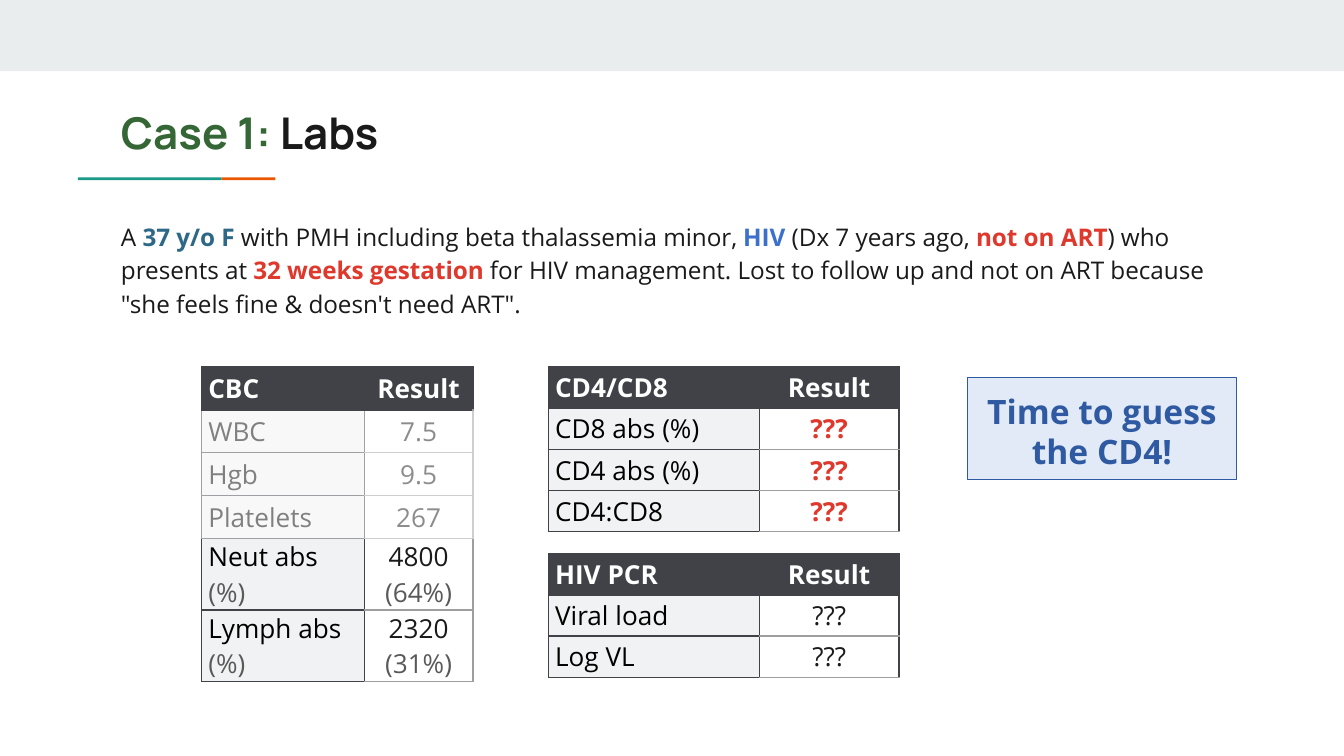
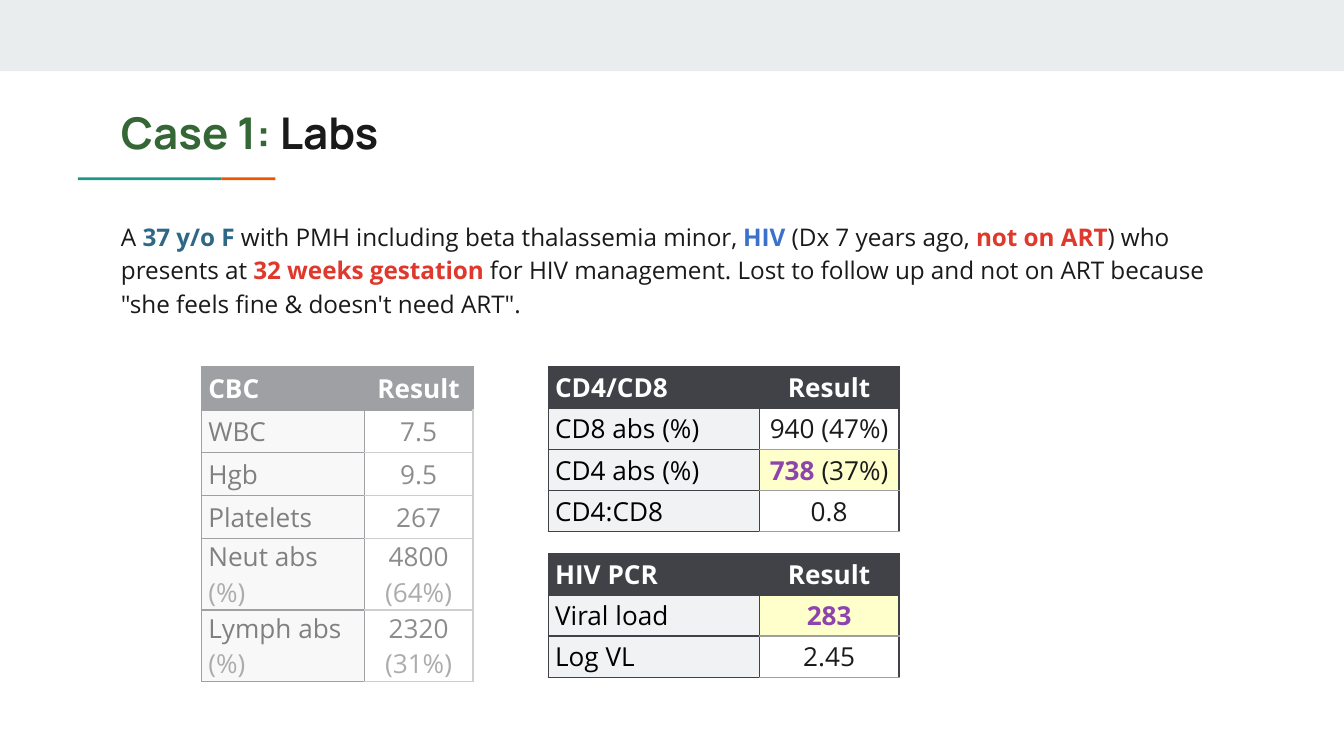
from lxml import etree
from pptx import Presentation
from pptx.dml.color import RGBColor
from pptx.enum.shapes import MSO_SHAPE
from pptx.enum.text import MSO_ANCHOR, MSO_AUTO_SIZE, PP_ALIGN
from pptx.oxml.ns import qn
from pptx.util import Inches, Pt

RECT = MSO_SHAPE.RECTANGLE
LEFT, CENTER = PP_ALIGN.LEFT, PP_ALIGN.CENTER
TOP, MIDDLE = MSO_ANCHOR.TOP, MSO_ANCHOR.MIDDLE
NO_FIT = MSO_AUTO_SIZE.NONE

WHITE = RGBColor(0xFF, 0xFF, 0xFF)
BLACK = RGBColor(0x00, 0x00, 0x00)
INK = RGBColor(0x1A, 0x1A, 0x1A)
MUTED = RGBColor(0x59, 0x59, 0x59)
BAND = RGBColor(0xE9, 0xED, 0xEE)
TEAL = RGBColor(0x1A, 0x99, 0x88)
ORANGE = RGBColor(0xEB, 0x56, 0x00)
GREEN = RGBColor(0x35, 0x66, 0x35)
STEEL = RGBColor(0x2D, 0x69, 0x87)
BLUE = RGBColor(0x3B, 0x71, 0xCA)
RED = RGBColor(0xDF, 0x38, 0x2C)
PURPLE = RGBColor(0x8E, 0x44, 0xAD)
YELLOW = RGBColor(0xFF, 0xFF, 0x00)
HEADER = RGBColor(0x40, 0x42, 0x47)
LABEL = RGBColor(0xF1, 0xF2, 0xF3)
GRID = RGBColor(0x9E, 0x9E, 0x9E)
CALLOUT = RGBColor(0xE2, 0xEA, 0xF7)
NAVY = RGBColor(0x2F, 0x5A, 0xA2)

TITLE_FONT, BODY_FONT = "Manrope", "Open Sans"

TITLE = [("Case 1:", GREEN), (" Labs", INK)]
HISTORY = [
    "A ",
    ("37 y/o F", STEEL, True),
    " with PMH including beta thalassemia minor, ",
    ("HIV ", BLUE, True),
    "(Dx 7 years ago, ",
    ("not on ART", RED, True),
    ") who presents at ",
    ("32 weeks gestation", RED, True),
    " for HIV management. Lost to follow up and not on ART because "
    "\"she feels fine & doesn't need ART\".",
]
PERCENT = [("(%)", MUTED)]
CBC_ROWS = [
    ([["WBC"]], [["7.5"]]),
    ([["Hgb"]], [["9.5"]]),
    ([["Platelets"]], [["267"]]),
    ([["Neut abs"], PERCENT], [["4800 ", ("(64%)", MUTED)]]),
    ([["Lymph abs"], PERCENT], [["2320"], [("(31%)", MUTED)]]),
]
CBC_HEIGHTS = [0.32] * 4 + [0.49] * 2
RESULT_ROW = 0.92 / 3
CD_LABELS = ["CD8 abs (%)", "CD4 abs (%)", "CD4:CD8"]
PCR_LABELS = ["Viral load", "Log VL"]
UNKNOWN = ("???", RED, True)


def add_runs(tf, paragraphs, font=BODY_FONT, size=14, color=INK, bold=False,
             align=LEFT, spacing=1.0, after=0):
    """Fill a text frame; a run is text or (text, color[, bold])."""
    for i, runs in enumerate(paragraphs):
        p = tf.add_paragraph() if i else tf.paragraphs[0]
        p.alignment, p.line_spacing = align, spacing
        p.space_before, p.space_after = Pt(0), Pt(after)
        for run in runs:
            text, *style = (run,) if isinstance(run, str) else run
            r = p.add_run()
            r.text = text
            r.font.name, r.font.size = font, Pt(size)
            r.font.color.rgb = style[0] if style else color
            r.font.bold = style[1] if len(style) > 1 else bold


def set_frame(tf, anchor=TOP, inset=0.1):
    """Set wrapping, anchor and insets of a shape's text frame."""
    tf.word_wrap = True
    tf.auto_size = NO_FIT
    tf.vertical_anchor = anchor
    tf.margin_left = tf.margin_right = Inches(inset)
    tf.margin_top = tf.margin_bottom = Inches(inset)


def place(sp, x, y, w, h):
    """Move and size a shape, in inches."""
    sp.left, sp.top, sp.width, sp.height = map(Inches, (x, y, w, h))


def set_alpha(props, percent):
    """Make the solid fill in a properties element translucent."""
    color = props.find(qn("a:solidFill"))[0]
    etree.SubElement(color, qn("a:alpha")).set("val", str(percent * 1000))


def add_rect(s, x, y, w, h, fill, line=None, alpha=None):
    """Add a flat rectangle."""
    sp = s.shapes.add_shape(RECT, *map(Inches, (x, y, w, h)))
    sp.shadow.inherit = False
    sp.fill.solid()
    sp.fill.fore_color.rgb = fill
    if alpha:
        set_alpha(sp._element.spPr, alpha)
    if line:
        sp.line.color.rgb = line
        sp.line.width = Pt(0.75)
    else:
        sp.line.fill.background()
    return sp


def set_borders(cell, left, right, top, bottom):
    """Give a cell its four borders, each a (color, points) pair."""
    tcPr = cell._tc.get_or_add_tcPr()
    edges = zip("LRTB", (left, right, top, bottom))
    for i, (edge, (color, points)) in enumerate(edges):
        ln = etree.Element(qn(f"a:ln{edge}"), w=str(Pt(points)))
        solid = etree.SubElement(ln, qn("a:solidFill"))
        etree.SubElement(solid, qn("a:srgbClr"), val=str(color))
        tcPr.insert(i, ln)


def style_cell(cell, paragraphs, column, fill=None, alpha=None, **fmt):
    """Write and fill one table cell; the label column is left aligned."""
    add_runs(cell.text_frame, paragraphs, align=CENTER if column else LEFT, **fmt)
    cell.margin_left = Inches(0 if column else 0.05)
    cell.margin_top = cell.margin_right = cell.margin_bottom = 0
    cell.vertical_anchor = MIDDLE
    if fill is None:
        cell.fill.background()
        return
    cell.fill.solid()
    cell.fill.fore_color.rgb = fill
    if alpha:
        set_alpha(cell._tc.tcPr, alpha)


def add_lab_table(s, x, y, widths, heights, name, rows, right=HEADER, marked=()):
    """Add a lab table of (label, value) rows; marked rows are highlighted."""
    tbl = s.shapes.add_table(len(heights), 2, Inches(x), Inches(y),
                             Inches(sum(widths)), Inches(sum(heights))).table
    tbl.horz_banding = False
    for col, w in zip(tbl.columns, widths):
        col.width = Inches(w)
    for row, h in zip(tbl.rows, heights):
        row.height = Inches(h)
    dark, heavy, grey = (HEADER, 0.75), (HEADER, 1.5), (GRID, 0.75)
    for c, text in enumerate((name, "Result")):
        cell = tbl.cell(0, c)
        style_cell(cell, [[text]], c, HEADER, color=WHITE, bold=True)
        set_borders(cell, dark, dark, dark, heavy)
    for i, (label, value) in enumerate(rows, 1):
        cell = tbl.cell(i, 0)
        style_cell(cell, label, 0, LABEL, color=BLACK)
        set_borders(cell, dark, dark, heavy if i == 1 else dark, dark)
        cell = tbl.cell(i, 1)
        highlight = (YELLOW, 20) if i in marked else ()
        style_cell(cell, value, 1, *highlight)
        set_borders(cell, dark, (right, 0.75), heavy if i == 1 else grey, grey)


def add_result_table(s, y, name, labels, values, marked=()):
    """Add one of the tables in the middle column."""
    rows = [([[label]], [value]) for label, value in zip(labels, values)]
    add_lab_table(s, 4.08, y, [1.57, 1.04], [RESULT_ROW] * (len(rows) + 1),
                  name, rows, marked=marked)


def add_case_slide(prs, cd_values, pcr_values, veil, cd_marked=(), pcr_marked=()):
    """Add a slide with the case history, the lab tables and a faded area."""
    s = prs.slides.add_slide(prs.slide_layouts[1])
    title, body = s.placeholders
    place(title, 0.8, 0.69, 8.41, 0.59)
    set_frame(title.text_frame, anchor=MIDDLE)
    add_runs(title.text_frame, [TITLE], font=TITLE_FONT, size=23.4, bold=True)
    place(body, 0.8, 1.52, 8.41, 1.1)
    set_frame(body.text_frame)
    pPr = body.text_frame.paragraphs[0]._p.get_or_add_pPr()
    pPr.set("marL", "0")
    pPr.set("indent", "0")
    etree.SubElement(pPr, qn("a:buNone"))
    add_runs(body.text_frame, [HISTORY], size=13, spacing=1.15, after=12)
    add_rect(s, 0, 0, 10, 0.53, BAND)
    add_rect(s, 0.58, 1.32, 1.07, 0.02, TEAL)
    add_rect(s, 1.65, 1.32, 0.4, 0.02, ORANGE)
    add_lab_table(s, 1.5, 2.73, [1.21, 0.81], CBC_HEIGHTS, "CBC", CBC_ROWS, right=GRID)
    add_result_table(s, 2.73, "CD4/CD8", CD_LABELS, cd_values, cd_marked)
    add_result_table(s, 4.12, "HIV PCR", PCR_LABELS, pcr_values, pcr_marked)
    top, height = veil
    add_rect(s, 1.37, top, 2.3, height, WHITE, alpha=50)
    return s


def add_callout(s, text):
    """Add the prompt box on the right."""
    sp = add_rect(s, 7.2, 2.81, 2, 0.76, CALLOUT, line=NAVY)
    set_frame(sp.text_frame)
    add_runs(sp.text_frame, [[text]], size=18, color=NAVY, bold=True, align=CENTER)


def main():
    """Build the two lab slides."""
    prs = Presentation()
    prs.slide_width = Inches(10)
    prs.slide_height = prs.slide_width * 9 // 16
    s = add_case_slide(prs, [[UNKNOWN]] * 3, [["???"]] * 2, veil=(3.06, 0.95))
    add_callout(s, "Time to guess the CD4!")
    add_case_slide(
        prs,
        [["940 (47%)"], [("738 ", PURPLE, True), "(37%)"], ["0.8"]],
        [[("283", PURPLE, True)], ["2.45"]],
        veil=(2.57, 2.6), cd_marked=[2], pcr_marked=[1])
    prs.save("out.pptx")


if __name__ == "__main__":
    main()
